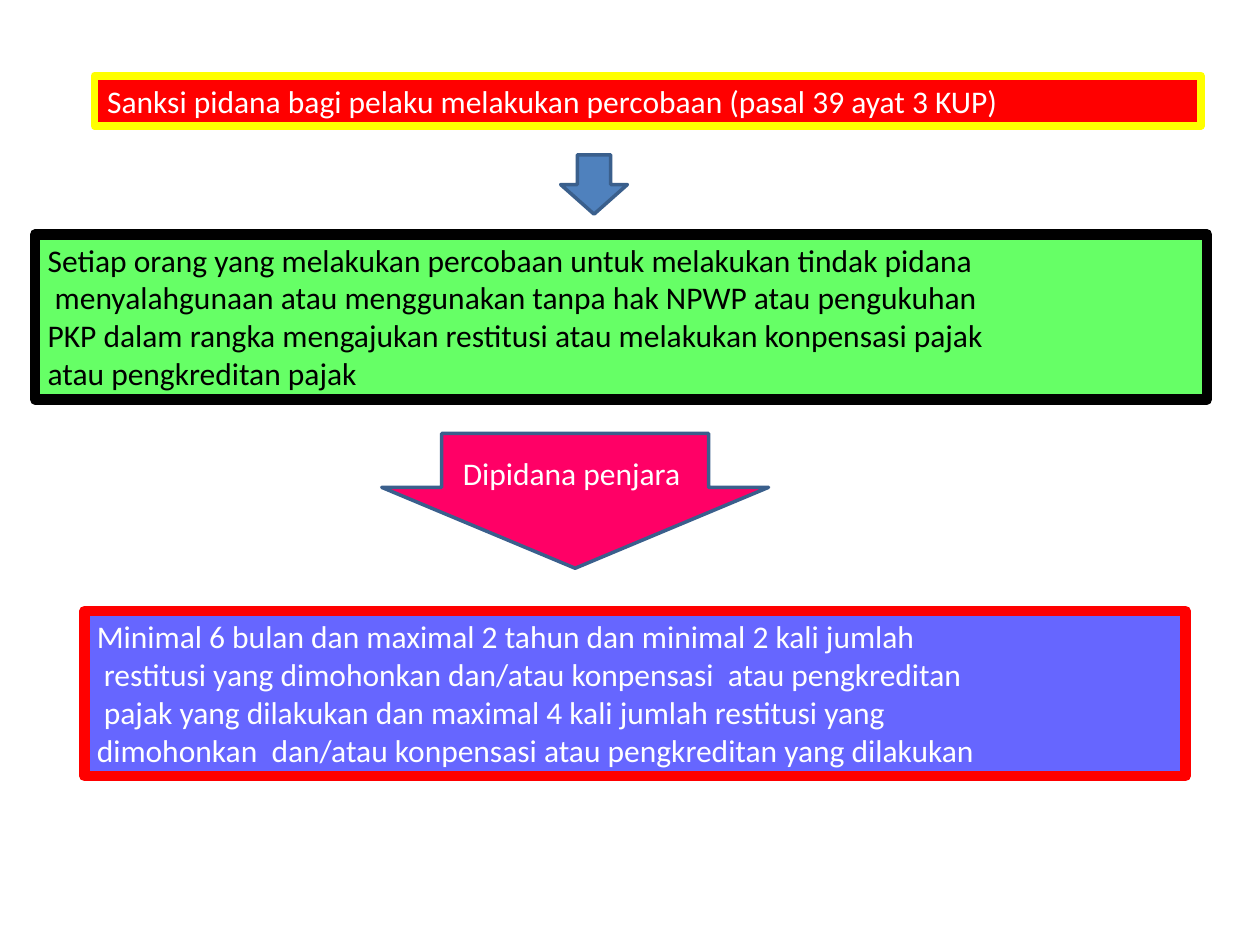
from pptx import Presentation
from pptx.dml.color import RGBColor
from pptx.enum.shapes import MSO_SHAPE
from pptx.enum.text import MSO_ANCHOR, MSO_AUTO_SIZE, PP_ALIGN
from pptx.util import Inches, Pt

WHITE = RGBColor(0xFF, 0xFF, 0xFF)
BLACK = RGBColor(0, 0, 0)
RED = RGBColor(0xFF, 0, 0)
YELLOW = RGBColor(0xFF, 0xFF, 0)
GREEN = RGBColor(0x66, 0xFF, 0x66)
VIOLET = RGBColor(0x66, 0x66, 0xFF)
PINK = RGBColor(0xFF, 0, 0x66)
BLUE = RGBColor(0x4F, 0x81, 0xBD)
NAVY = RGBColor(0x3A, 0x5F, 0x8C)

TITLE = ["Sanksi pidana bagi pelaku melakukan percobaan (pasal 39 ayat 3 KUP)"]
OFFENCE = [
    "Setiap orang yang melakukan percobaan untuk melakukan tindak pidana",
    " menyalahgunaan atau menggunakan tanpa hak NPWP atau pengukuhan",
    "PKP dalam rangka mengajukan restitusi atau melakukan konpensasi pajak",
    "atau pengkreditan pajak",
]
PENALTY = [
    "Minimal 6 bulan dan maximal 2 tahun dan minimal 2 kali jumlah",
    " restitusi yang dimohonkan dan/atau konpensasi  atau pengkreditan",
    " pajak yang dilakukan dan maximal 4 kali jumlah restitusi yang",
    "dimohonkan  dan/atau konpensasi atau pengkreditan yang dilakukan",
]
# left, top, width, height; fill, line, line width; text, text colour
BOXES = [
    ((0.28, 1.86, 9.3, 1.31), GREEN, BLACK, 6, OFFENCE, BLACK),
    ((0.67, 4.85, 8.74, 1.31), VIOLET, RED, 6, PENALTY, WHITE),
]
# place, fill, shaft and head proportions, label
ARROWS = [
    ((4.45, 1.23, 0.53, 0.47), BLUE, (0.5, 0.5), []),
    ((3.03, 3.44, 3.07, 1.07), PINK, (0.69, 0.6), ["Dipidana penjara "]),
]


def paint(shape, fill, line, width):
    shape.fill.solid()
    shape.fill.fore_color.rgb = fill
    shape.line.color.rgb = line
    shape.line.width = Pt(width)


def write(shape, lines, color, align=PP_ALIGN.LEFT, anchor=MSO_ANCHOR.TOP):
    frame = shape.text_frame
    frame.word_wrap = True
    frame.auto_size = MSO_AUTO_SIZE.NONE
    frame.vertical_anchor = anchor
    frame.text = "\n".join(lines)
    for para in frame.paragraphs:
        para.alignment = align
        para.font.name = "Calibri"
        para.font.size = Pt(18)
        para.font.color.rgb = color


def add(slide, kind, place):
    shape = slide.shapes.add_shape(kind, *map(Inches, place))
    shape.shadow.inherit = False
    return shape


def main():
    deck = Presentation()
    deck.slide_width, deck.slide_height = Inches(10), Inches(7.5)
    slide = deck.slides.add_slide(deck.slide_layouts[5])

    title = slide.shapes.title
    title.left, title.top = Inches(0.75), Inches(0.6)
    title.width, title.height = Inches(8.78), Inches(0.4)
    paint(title, RED, YELLOW, 4.5)
    write(title, TITLE, WHITE)

    for place, fill, line, width, lines, color in BOXES:
        box = add(slide, MSO_SHAPE.RECTANGLE, place)
        paint(box, fill, line, width)
        write(box, lines, color)

    for place, fill, ratios, label in ARROWS:
        arrow = add(slide, MSO_SHAPE.DOWN_ARROW, place)
        for i, ratio in enumerate(ratios):
            arrow.adjustments[i] = ratio
        paint(arrow, fill, NAVY, 2)
        if label:
            write(arrow, label, WHITE, PP_ALIGN.CENTER, MSO_ANCHOR.MIDDLE)

    deck.save("out.pptx")


if __name__ == "__main__":
    main()
